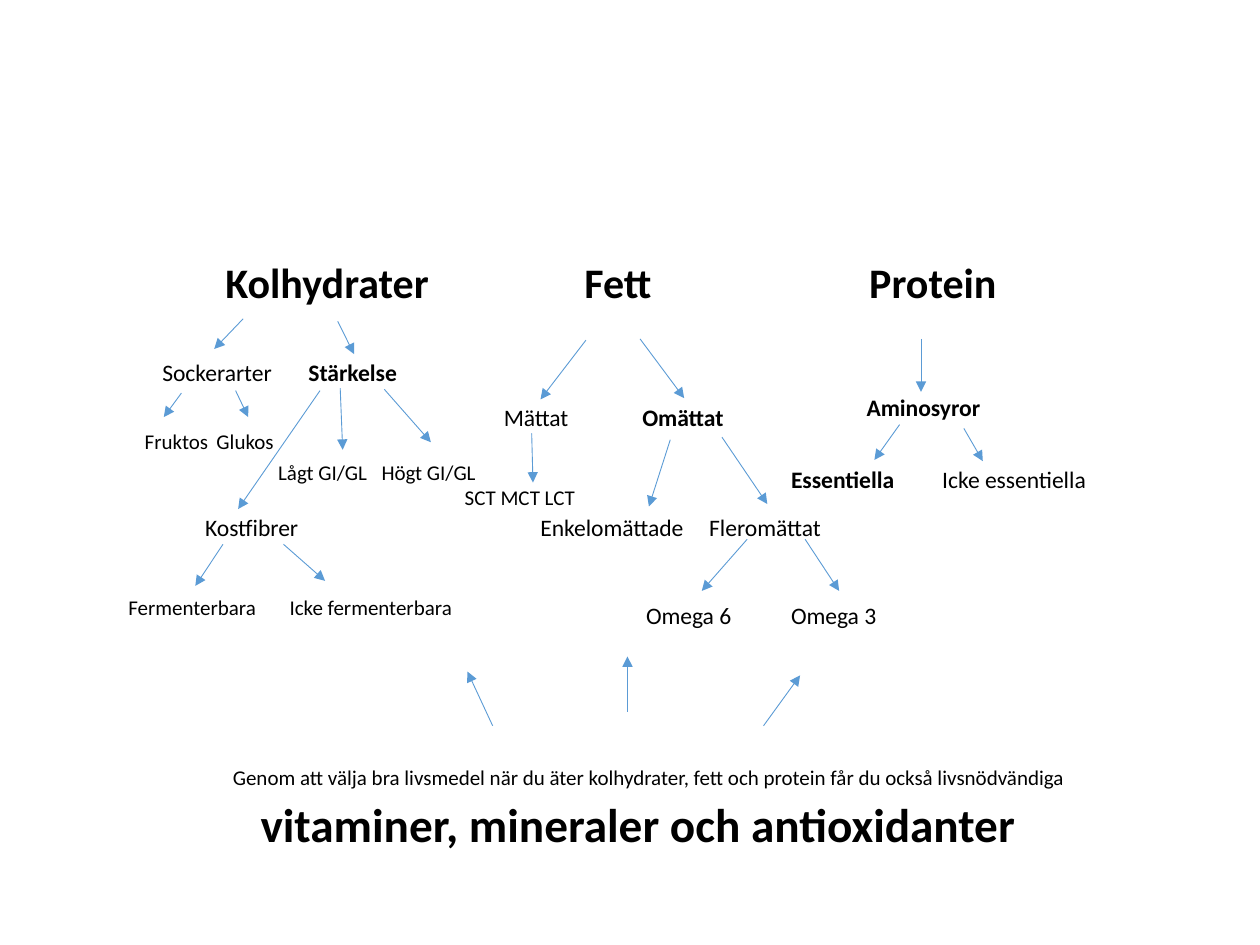
from lxml.etree import SubElement
from pptx import Presentation
from pptx.dml.color import RGBColor
from pptx.enum.shapes import MSO_CONNECTOR
from pptx.oxml.ns import qn
from pptx.util import Inches, Pt

COLORS = {"text": "000000", "arrow": "5B9BD5"}
FONT = "Calibri"
INSET = 0.1


def add_labels(slide, left, top, width, labels, size=13.5, height=0.33,
               bold=(), wrap=True, line_spacing=None):
    first = labels[0][1]
    box = slide.shapes.add_textbox(Inches(left + first - INSET), Inches(top),
                                   Inches(width), Inches(height))
    box.text_frame.word_wrap = wrap
    paragraph = box.text_frame.paragraphs[0]
    if line_spacing:
        paragraph.line_spacing = line_spacing
    for index, (wording, _) in enumerate(labels):
        run = paragraph.add_run()
        run.text = "\t" + wording if index else wording
        run.font.name = FONT
        run.font.size = Pt(size)
        run.font.bold = wording in bold
        run.font.color.rgb = RGBColor.from_string(COLORS["text"])
    if len(labels) > 1:
        stops = SubElement(paragraph._p.get_or_add_pPr(), qn("a:tabLst"))
        for _, offset in labels[1:]:
            SubElement(stops, qn("a:tab"), pos=str(Inches(offset - first)), algn="l")


def add_arrows(slide, left, top, arrows):
    for x1, y1, x2, y2 in arrows:
        arrow = slide.shapes.add_connector(
            MSO_CONNECTOR.STRAIGHT, Inches(left + x1), Inches(top + y1),
            Inches(left + x2), Inches(top + y2))
        arrow.line.color.rgb = RGBColor.from_string(COLORS["arrow"])
        arrow.line.width = Pt(0.5)
        SubElement(arrow.line._get_or_add_ln(), qn("a:tailEnd"), type="triangle")
        SubElement(arrow._element.spPr, qn("a:effectLst"))


def add_headings(slide, left, top, width):
    headings = [("Kolhydrater", 0.18), ("Fett", 3.03), ("Protein", 5.29)]
    add_labels(slide, left, top, width, headings, size=24, height=0.54,
               bold=("Kolhydrater", "Fett", "Protein"), line_spacing=0.9)


def add_carbohydrates(slide, left, top):
    add_arrows(slide, left, top, [
        (1.03, 0.03, 0.8, 0.27), (1.78, 0.05, 1.91, 0.31),
        (0.54, 0.62, 0.4, 0.81), (0.97, 0.6, 1.07, 0.81),
        (1.64, 0.6, 0.99, 1.54), (1.8, 0.58, 1.82, 1.07),
        (2.15, 0.59, 2.52, 1.01), (0.87, 1.82, 0.65, 2.15),
        (1.35, 1.82, 1.68, 2.11)])
    add_labels(slide, left, top + 0.29, 3.4,
               [("Sockerarter", 0.39), ("Stärkelse", 1.55)], bold=("Stärkelse",))
    add_labels(slide, left, top + 0.85, 1.34,
               [("Fruktos", 0.25), ("Glukos", 0.82)], size=12, height=0.3)
    add_labels(slide, left, top + 1.1, 2.3,
               [("Lågt GI/GL", 1.31), ("Högt GI/GL", 2.13)], size=12)
    add_labels(slide, left, top + 1.52, 1.07, [("Kostfibrer", 0.73)])
    add_labels(slide, left, top + 2.17, 3.27,
               [("Fermenterbara", 0.12), ("Icke fermenterbara", 1.4)],
               size=12, height=0.3)


def add_fat(slide, left, top):
    add_arrows(slide, left, top, [
        (1.05, 0.1, 0.69, 0.57), (1.48, 0.09, 1.83, 0.56),
        (0.62, 0.84, 0.63, 1.23), (1.72, 0.89, 1.55, 1.42),
        (2.13, 0.87, 2.49, 1.4), (2.33, 1.68, 1.97, 2.09),
        (2.79, 1.68, 3.06, 2.09)])
    add_labels(slide, left, top + 0.55, 2.13,
               [("Mättat", 0.4), ("Omättat", 1.5)], bold=("Omättat",))
    add_labels(slide, left, top + 1.2, 2.2, [("SCT MCT LCT", 0.09)], size=12)
    add_labels(slide, left, top + 1.42, 2.75,
               [("Enkelomättade", 0.69), ("Fleromättat", 2.03)])
    add_labels(slide, left, top + 2.12, 2.7, [("Omega 6", 1.53), ("Omega 3", 2.68)])


def add_protein(slide, left, top):
    add_arrows(slide, left, top, [
        (1.21, 0.09, 1.21, 0.51), (1.04, 0.77, 0.84, 1.05),
        (1.55, 0.8, 1.7, 1.06)])
    add_labels(slide, left, top + 0.47, 1.4, [("Aminosyror", 0.78)],
               bold=("Aminosyror",))
    add_labels(slide, left, top + 1.04, 2.57,
               [("Essentiella", 0.18), ("Icke essentiella", 1.38)],
               bold=("Essentiella",))


def add_conclusion(slide, left, top):
    add_arrows(slide, left, top, [
        (2.21, 0.56, 2.01, 0.13), (3.28, 0.45, 3.28, 0.01),
        (4.36, 0.56, 4.65, 0.16)])
    add_labels(slide, left, top + 0.82, 7.16,
               [("Genom att välja bra livsmedel när du äter kolhydrater, fett och "
                 "protein får du också livsnödvändiga", 0.15)], size=12, height=0.3)
    nutrients = "vitaminer, mineraler och antioxidanter"
    add_labels(slide, left, top + 1.06, 6.26, [(nutrients, 0.37)], size=27,
               height=0.56, bold=(nutrients,), wrap=False)


def main():
    presentation = Presentation()
    presentation.slide_width = Inches(10)
    presentation.slide_height = Inches(7.5)
    slide = presentation.slides.add_slide(presentation.slide_layouts[6])
    add_headings(slide, 1.61, 2.03, 7.71)
    add_carbohydrates(slide, 0.9, 2.5)
    add_fat(slide, 3.6, 2.6)
    add_protein(slide, 6.1, 2.6)
    add_conclusion(slide, 1.7, 5.2)
    presentation.save("out.pptx")


if __name__ == "__main__":
    main()
